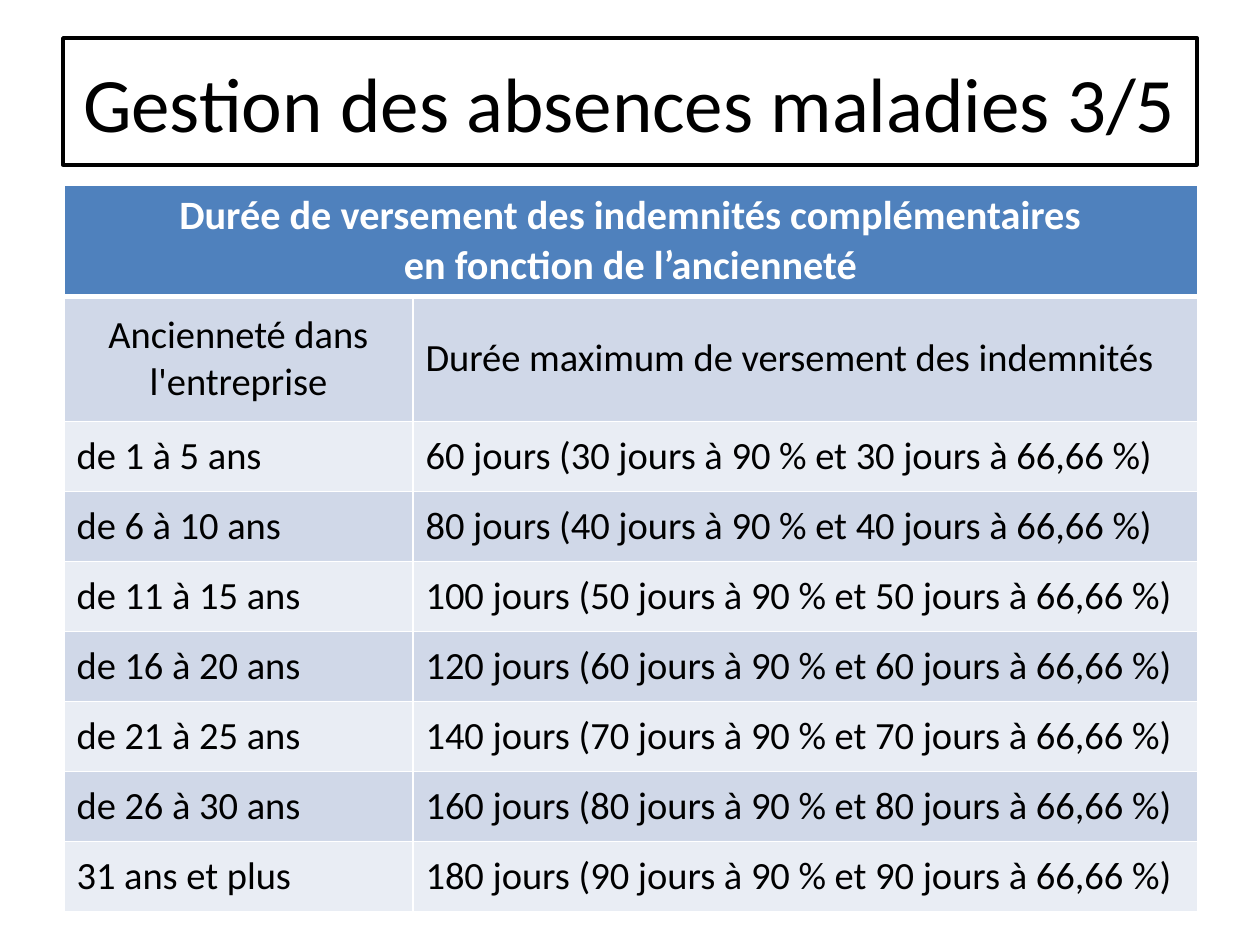
"""Build the slide on how long sick-leave benefits are paid by seniority."""
import pptx
import pptx.dml.color
import pptx.enum.shapes
import pptx.enum.text
import pptx.oxml
import pptx.oxml.ns
import pptx.util

THEME = {
    "font": "Calibri", "black": "000000", "white": "FFFFFF", "header": "4F81BD",
    "bands": ("D0D8E8", "E9EDF4"), "title_size": 44, "header_size": 23, "body_size": 22,
}
PX = 914400 / 126
ALIGN = pptx.enum.text.PP_ALIGN
MIDDLE = pptx.enum.text.MSO_ANCHOR.MIDDLE
rgb = pptx.dml.color.RGBColor.from_string


def px(*lengths):
    return [pptx.util.Emu(round(length * PX)) for length in lengths]


def style_text(frame, size, color, align, bold=False):
    for para in frame.paragraphs:
        para.alignment = align
        for span in para.runs:
            span.font.name = THEME["font"]
            span.font.size = pptx.util.Pt(size)
            span.font.bold = bold
            span.font.color.rgb = rgb(color)


deck = pptx.Presentation()
deck.slide_width, deck.slide_height = px(1260, 945)
page = deck.slides.add_slide(deck.slide_layouts[6])

title = page.shapes.add_shape(
    pptx.enum.shapes.MSO_SHAPE.RECTANGLE, *px(63, 38, 1134, 127))
title.shadow.inherit = False
title.fill.solid()
title.fill.fore_color.rgb = rgb(THEME["white"])
title.line.color.rgb = rgb(THEME["black"])
title.line.width = pptx.util.Pt(2)
title.text_frame.word_wrap = True
title.text_frame.vertical_anchor = MIDDLE
title.text_frame.text = "Gestion des absences maladies 3/5"
style_text(title.text_frame, THEME["title_size"], THEME["black"], ALIGN.CENTER)

seniorities = [f"de {first} à {first + 4} ans" for first in (1, 6, 11, 16, 21, 26)]
seniorities.append("31 ans et plus")
rows = [
    ("Durée de versement des indemnités complémentaires\nen fonction de l’ancienneté", ""),
    ("Ancienneté dans l'entreprise", "Durée maximum de versement des indemnités"),
]
for half, seniority in zip(range(30, 100, 10), seniorities):
    rows.append((seniority, f"{2 * half} jours ({half} jours à 90 % et {half} jours à 66,66 %)"))

column_widths = px(349, 785)
row_heights = px(111, 125, *[70] * len(seniorities))
table = page.shapes.add_table(
    len(rows), 2, *px(64, 185), sum(column_widths), sum(row_heights)).table
for column, width in zip(table.columns, column_widths):
    column.width = width
for row, height in zip(table.rows, row_heights):
    row.height = height
table.cell(0, 0).merge(table.cell(0, 1))

for row_index, texts in enumerate(rows):
    is_header = row_index == 0
    for column_index, text in enumerate(texts):
        cell = table.cell(row_index, column_index)
        properties = cell._tc.get_or_add_tcPr()
        for side in "LRTB":
            thick = (is_header and side == "B") or (row_index == 1 and side == "T")
            properties.append(pptx.oxml.parse_xml(
                f'<a:ln{side} {pptx.oxml.ns.nsdecls("a")} w="{pptx.util.Pt(3 if thick else 1)}">'
                f'<a:solidFill><a:srgbClr val="{THEME["white"]}"/></a:solidFill></a:ln{side}>'))
        cell.fill.solid()
        cell.fill.fore_color.rgb = rgb(
            THEME["header"] if is_header else THEME["bands"][(row_index - 1) % 2])
        cell.vertical_anchor = MIDDLE
        if cell.is_spanned:
            continue
        cell.text_frame.text = text
        centered = row_index < 2 and column_index == 0
        style_text(
            cell.text_frame,
            THEME["header_size" if is_header else "body_size"],
            THEME["white" if is_header else "black"],
            ALIGN.CENTER if centered else ALIGN.LEFT,
            bold=is_header)

deck.save("out.pptx")
